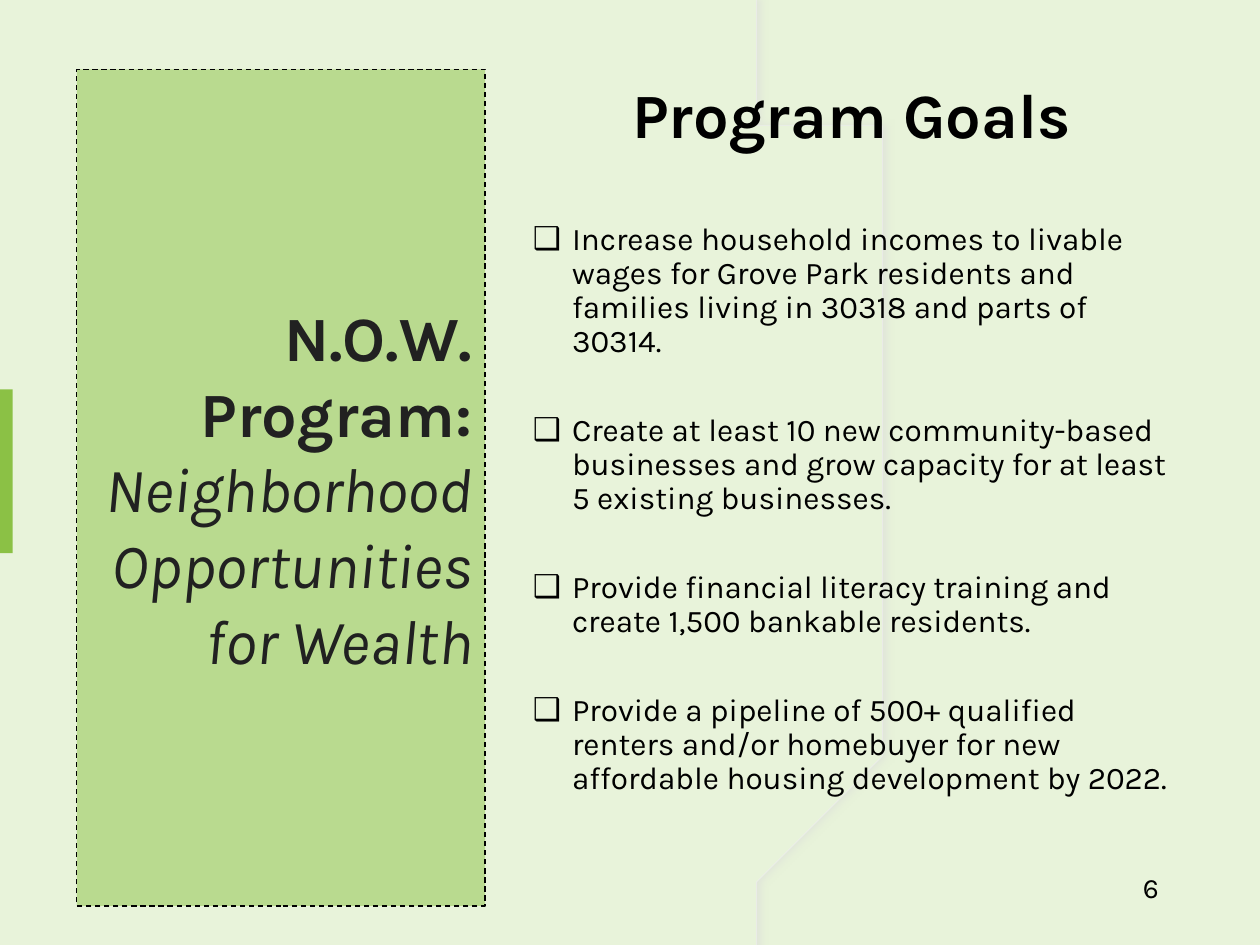
from lxml import etree
from pptx import Presentation
from pptx.dml.color import RGBColor
from pptx.enum import dml, shapes, text
from pptx.oxml import parse_xml
from pptx.oxml.ns import nsdecls, qn
from pptx.util import Inches, Pt

PROGRAM = [("N.O.W. Program: ", True, False),
           ("Neighborhood Opportunities for Wealth", False, True)]
HEADING = "Program Goals"
GOALS = [
    "Increase household incomes to livable wages for Grove Park residents "
    "and families living in 30318 and parts of 30314.",
    "Create at least 10 new community-based businesses and grow capacity "
    "for at least 5 existing businesses.",
    "Provide financial literacy training and create 1,500 bankable residents.",
    "Provide a pipeline of 500+ qualified renters and/or homebuyer for new "
    "affordable housing development by 2022.",
]
PAGE = "6"

THEME = {
    "font": "Karla",
    "background": "E8F3DA", "panel": "B9DA8F", "accent": "8BC145",
    "arc": "EFEFEF", "shadow": "D9D9D9", "program": "212121", "ink": "000000",
    "title": 36, "body": 18, "page": 16,
}
PANEL = (0.61, 0.55, 3.24, 6.64)
ACCENT = (0, 3.09, 0.1, 1.3)
HEADING_BOX = (4.13, 0.55, 5.26, 0.94)
GOALS_BOX = (4.13, 1.37, 5.26, 5.21)
PAGE_BOX = (8.87, 6.74, 0.53, 0.6)
# Upper half of the arc as Bezier control points; the lower half mirrors it
ARC = [(6.15, 0.09), (6.64, 1.11), (6.93, 2.38), (6.93, 3.75)]
ARC_STEPS = 24
SLIDE_HEIGHT = 7.5


def color(name):
    return RGBColor.from_string(THEME[name])


def fill(target, name):
    target.fill.solid()
    target.fill.fore_color.rgb = color(name)


def place(shape, box):
    shape.left, shape.top, shape.width, shape.height = map(Inches, box)


def style(run, size, ink="ink", bold=False, italic=False):
    run.font.name = THEME["font"]
    run.font.size = Pt(THEME[size])
    run.font.color.rgb = color(ink)
    run.font.bold, run.font.italic = bold, italic


def set_frame(frame, anchor):
    frame.word_wrap = True
    frame.auto_size = text.MSO_AUTO_SIZE.NONE
    frame.vertical_anchor = anchor


def bezier(points, t):
    weights = ((1 - t) ** 3, 3 * t * (1 - t) ** 2, 3 * t * t * (1 - t), t ** 3)
    return tuple(sum(w * p[axis] for w, p in zip(weights, points))
                 for axis in (0, 1))


def add_arc_field(slide, layer, edge):
    """Add the curved field behind the text, its corners at x = edge."""
    upper = [bezier(ARC, i / ARC_STEPS) for i in range(ARC_STEPS + 1)]
    lower = [(x, SLIDE_HEIGHT - y) for x, y in reversed(upper[:-1])]
    outline = [(edge, 0), *upper, *lower, (edge, SLIDE_HEIGHT),
               (0, SLIDE_HEIGHT)]
    builder = slide.shapes.build_freeform(0, 0, scale=Inches(1))
    builder.add_line_segments(outline, close=True)
    field = builder.convert_to_shape()
    fill(field, "background")
    field.line.fill.background()
    field.shadow.inherit = False
    slide.shapes._spTree.insert(2 + layer, field._element)
    return field


def add_label(slide, box, label, size, anchor, bold=False):
    frame = slide.shapes.add_textbox(*map(Inches, box)).text_frame
    set_frame(frame, anchor)
    frame.text = label
    paragraph = frame.paragraphs[0]
    paragraph.alignment = text.PP_ALIGN.CENTER
    style(paragraph.runs[0], size, bold=bold)


def add_checkbox(paragraph):
    properties = paragraph._p.get_or_add_pPr()
    properties.set("marL", str(Inches(0.31)))
    properties.set("indent", str(-Inches(0.31)))
    etree.SubElement(properties, qn("a:buChar")).set("char", "❑")


def main():
    deck = Presentation()
    deck.slide_width, deck.slide_height = Inches(10), Inches(SLIDE_HEIGHT)
    slide = deck.slides.add_slide(deck.slide_layouts[1])
    fill(slide.background, "background")

    arc = add_arc_field(slide, 0, 6.11)
    arc.line.color.rgb = color("arc")
    arc.line.width = Pt(0.75)
    arc._element.spPr.find(qn("a:effectLst")).append(parse_xml(
        f'<a:outerShdw {nsdecls("a")} blurRad="{Pt(4)}" dist="{Pt(3)}" dir="0">'
        f'<a:srgbClr val="{THEME["shadow"]}"><a:alpha val="50000"/></a:srgbClr>'
        '</a:outerShdw>'))
    add_arc_field(slide, 1, 6.1)

    program = slide.shapes.title
    place(program, PANEL)
    fill(program, "panel")
    program.line.color.rgb = color("ink")
    program.line.width = Pt(0.75)
    program.line.dash_style = dml.MSO_LINE.DASH
    set_frame(program.text_frame, text.MSO_ANCHOR.MIDDLE)
    paragraph = program.text_frame.paragraphs[0]
    paragraph.alignment = text.PP_ALIGN.RIGHT
    for wording, bold, italic in PROGRAM:
        run = paragraph.add_run()
        run.text = wording
        style(run, "title", "program", bold, italic)

    accent = slide.shapes.add_shape(shapes.MSO_SHAPE.RECTANGLE,
                                    *map(Inches, ACCENT))
    fill(accent, "accent")
    accent.line.fill.background()
    accent.shadow.inherit = False

    add_label(slide, HEADING_BOX, HEADING, "title", text.MSO_ANCHOR.TOP, bold=True)

    goals = slide.placeholders[1]
    place(goals, GOALS_BOX)
    frame = goals.text_frame
    set_frame(frame, text.MSO_ANCHOR.TOP)
    frame.margin_top = Inches(0.4)
    frame.text = "\n".join(GOALS)
    for paragraph in frame.paragraphs:
        paragraph.line_spacing = 0.9
        paragraph.space_before = Pt(0)
        paragraph.space_after = Pt(31.4)
        add_checkbox(paragraph)
        style(paragraph.runs[0], "body")

    add_label(slide, PAGE_BOX, PAGE, "page", text.MSO_ANCHOR.MIDDLE)
    deck.save("out.pptx")


if __name__ == "__main__":
    main()
